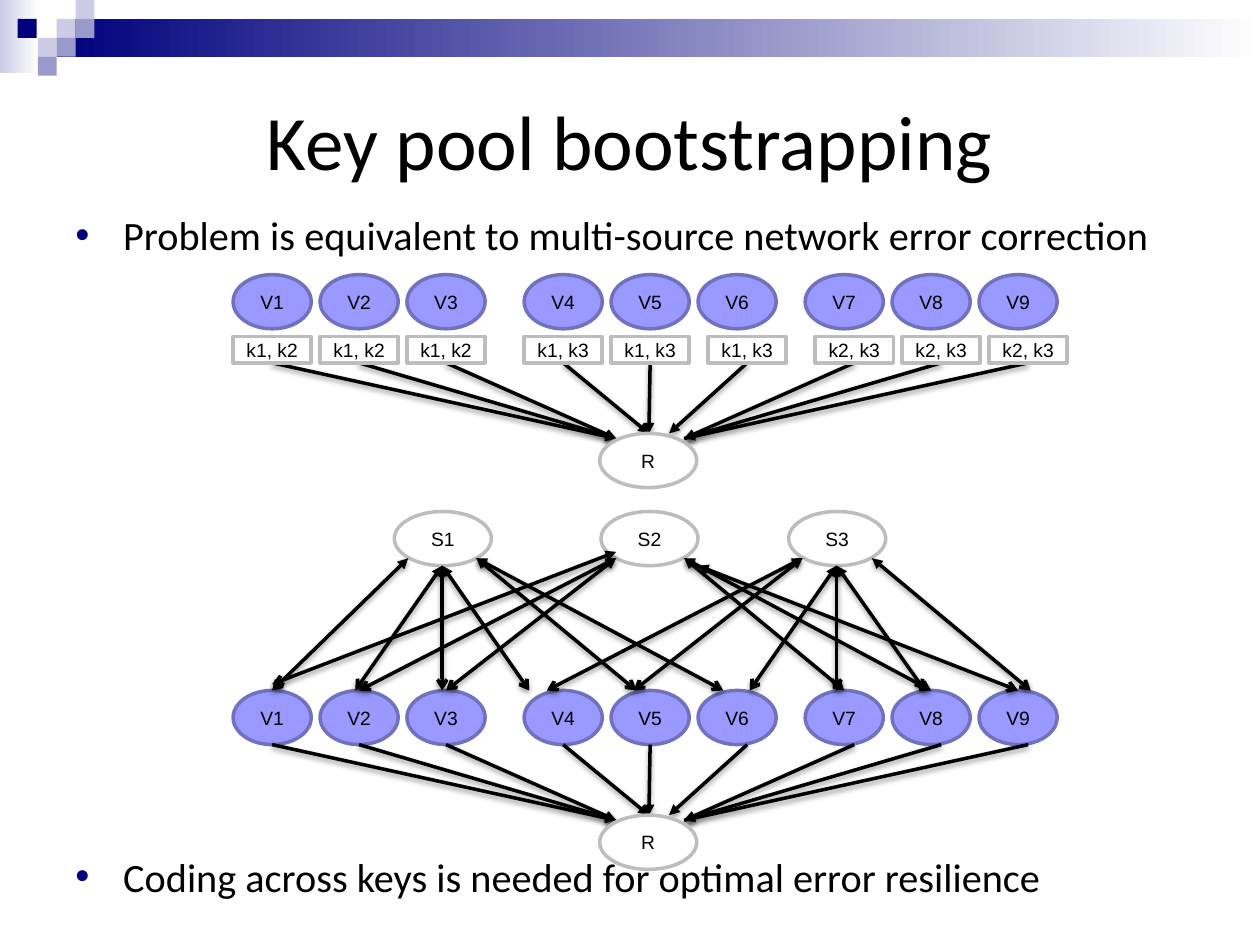
from lxml import etree
from pptx import Presentation
from pptx.dml.color import RGBColor
from pptx.enum import shapes, text
from pptx.oxml import parse_xml
from pptx.oxml.ns import nsdecls, qn
from pptx.util import Inches, Pt

BLACK = RGBColor(0, 0, 0)
WHITE = RGBColor(255, 255, 255)
NAVY = RGBColor(0x00, 0x00, 0x7D)
PALE = RGBColor(0xCC, 0xCC, 0xE6)
LAVENDER = RGBColor(0x99, 0x99, 0xCC)
VIOLET = RGBColor(0x99, 0x99, 0xFF)
VIOLET_EDGE = RGBColor(0x71, 0x71, 0xBD)
GREY = RGBColor(0xBD, 0xBD, 0xBD)

TITLE = "Key pool bootstrapping"
# text, space before in points
BULLETS = [
    ("Problem is equivalent to multi-source network error correction", 0),
    ("Coding across keys is needed for optimal error resilience", 339),
]
GRADIENT_BARS = [((0, 0, 0.31, 0.58), PALE), ((0.45, 0.15, 9.55, 0.3), NAVY)]
TILE = 0.15
TILES = [(0.45, 0.15, PALE), (0.6, 0, PALE), (0.6, 0.15, LAVENDER), (0.3, 0.3, PALE),
         (0.14, 0.15, NAVY), (0.45, 0.3, LAVENDER), (0.3, 0.45, LAVENDER)]

NODE_PITCH = 0.69
NODE_GROUPS = [1.85, 4.16, 6.39]
NODE_LEFTS = [left + i * NODE_PITCH for left in NODE_GROUPS for i in range(3)]
KEYS = ["k1, k2"] * 3 + ["k1, k3"] * 3 + ["k2, k3"] * 3
KEY_SHIFTS = [0] * 5 + [0.08] * 4
NODE_TOPS = [2.18, 5.48]
KEY_TOP = 2.67
NODE_SIZE = (0.62, 0.43)
KEY_SIZE = (0.62, 0.21)
HUB_SIZE = (0.77, 0.43)

# top of the receiver, bottom of the row that feeds it
RECEIVER_LEFT = 4.76
RECEIVERS = [(3.44, 2.88), (6.47, 5.91)]
# x, depth below the receiver's top: where each arrow lands
LANDINGS = [(4.89, 0.04)] * 3 + [(5.15, 0)] * 2 + [(5.31, 0)] + [(5.43, 0.04)] * 3

# name, left, arrows as (start, x of the end)
SOURCE_TOP = 4.06
SOURCES = [
    ("S2", 4.77, [((4.89, 4.38), 2.16), ((4.89, 4.43), 2.85), ((4.89, 4.43), 3.54),
                  ((5.43, 4.43), 6.7), ((5.43, 4.43), 7.39), ((5.54, 4.49), 8.08)]),
    ("S1", 3.13, [((3.24, 4.43), 2.16), ((3.51, 4.49), 2.82), ((3.51, 4.49), 3.51),
                  ((3.51, 4.49), 4.2), ((3.78, 4.43), 5.05), ((3.78, 4.43), 5.74)]),
    ("S3", 6.26, [((6.37, 4.43), 4.34), ((6.37, 4.43), 5.03), ((6.64, 4.49), 5.95),
                  ((6.64, 4.49), 6.64), ((6.64, 4.49), 7.34), ((6.92, 4.43), 8.18)]),
]

SHADOW = (f'<a:effectLst {nsdecls("a")}><a:outerShdw blurRad="39370" dist="20320" '
          'dir="5400000" rotWithShape="0"><a:srgbClr val="000000"><a:alpha val="38000"/>'
          '</a:srgbClr></a:outerShdw></a:effectLst>')


def add_run(paragraph, words, size, font):
    run = paragraph.add_run()
    run.text = words
    run.font.size = Pt(size)
    run.font.name = font
    run.font.color.rgb = BLACK


def add_block(slide, kind, box):
    shape = slide.shapes.add_shape(kind, *map(Inches, box))
    shape.shadow.inherit = False
    shape.line.fill.background()
    return shape


def add_node(slide, kind, box, label, fill=WHITE, edge=GREY):
    shape = add_block(slide, kind, box)
    shape.fill.solid()
    shape.fill.fore_color.rgb = fill
    shape.line.color.rgb = edge
    shape.line.width = Pt(2)
    frame = shape.text_frame
    frame.margin_left = frame.margin_right = frame.margin_top = frame.margin_bottom = 0
    frame.vertical_anchor = text.MSO_ANCHOR.MIDDLE
    frame.paragraphs[0].alignment = text.PP_ALIGN.CENTER
    add_run(frame.paragraphs[0], label, 11, "Arial")


def add_arrow(slide, start, end, head="triangle", tail=None):
    """Draw a shadowed line; head sits at start and tail at end."""
    line = slide.shapes.add_connector(shapes.MSO_CONNECTOR.STRAIGHT,
                                      *map(Inches, (*start, *end)))
    line.line.color.rgb = BLACK
    line.line.width = Pt(2)
    properties = line.line._get_or_add_ln()
    for tag, style in (("a:headEnd", head), ("a:tailEnd", tail)):
        if style:
            etree.SubElement(properties, qn(tag), type=style)
    line._element.spPr.append(parse_xml(SHADOW))


def add_decoration(slide):
    for box, colour in GRADIENT_BARS:
        bar = add_block(slide, shapes.MSO_SHAPE.RECTANGLE, box)
        bar.fill.gradient()
        bar.fill.gradient_angle = 0
        for stop, stop_colour, position in zip(bar.fill.gradient_stops, (colour, WHITE), (0, 1)):
            stop.color.rgb = stop_colour
            stop.position = position
    for left, top, colour in TILES:
        tile = add_block(slide, shapes.MSO_SHAPE.RECTANGLE, (left, top, TILE, TILE))
        tile.fill.solid()
        tile.fill.fore_color.rgb = colour


def add_text(slide):
    title = slide.shapes.title
    title.left, title.top, title.width, title.height = map(Inches, (0.5, 0.36, 9, 1.5))
    title.text_frame.vertical_anchor = text.MSO_ANCHOR.MIDDLE
    title.text_frame.paragraphs[0].alignment = text.PP_ALIGN.CENTER
    add_run(title.text_frame.paragraphs[0], TITLE, 44, "Calibri")

    frame = slide.shapes.add_textbox(*map(Inches, (0.5, 1.62, 9.3, 5.6))).text_frame
    frame.word_wrap = True
    for i, (words, gap) in enumerate(BULLETS):
        paragraph = frame.add_paragraph() if i else frame.paragraphs[0]
        paragraph.space_before = Pt(gap)
        properties = paragraph._p.get_or_add_pPr()
        properties.set("marL", str(Inches(0.38)))
        properties.set("indent", str(-Inches(0.38)))
        colour = etree.SubElement(properties, qn("a:buClr"))
        etree.SubElement(colour, qn("a:srgbClr"), val=str(NAVY))
        etree.SubElement(properties, qn("a:buFont"), typeface="Arial")
        etree.SubElement(properties, qn("a:buChar"), char="•")
        add_run(paragraph, words, 23, "Calibri")


def add_network(slide):
    oval = shapes.MSO_SHAPE.OVAL
    for top in NODE_TOPS:
        for number, left in enumerate(NODE_LEFTS, 1):
            add_node(slide, oval, (left, top, *NODE_SIZE), f"V{number}", VIOLET, VIOLET_EDGE)

    for top, feed in RECEIVERS:
        for i, (x, depth) in enumerate(LANDINGS):
            end_x = NODE_LEFTS[i] + KEY_SHIFTS[i] + KEY_SIZE[0] / 2
            is_last = i == len(LANDINGS) - 1
            add_arrow(slide, (x, top + depth), (end_x, feed),
                      head=None if is_last else "triangle")
        add_node(slide, oval, (RECEIVER_LEFT, top, *HUB_SIZE), "R")

    for left, shift, label in zip(NODE_LEFTS, KEY_SHIFTS, KEYS):
        add_node(slide, shapes.MSO_SHAPE.RECTANGLE, (left + shift, KEY_TOP, *KEY_SIZE), label)

    for name, left, arrows in SOURCES:
        add_node(slide, oval, (left, SOURCE_TOP, *HUB_SIZE), name)
        for start, end_x in arrows:
            end_y = 5.43 if start[1] == 4.38 else NODE_TOPS[1]
            add_arrow(slide, start, (end_x, end_y), tail="arrow")


def main():
    presentation = Presentation()
    presentation.slide_width, presentation.slide_height = Inches(10), Inches(7.5)
    slide = presentation.slides.add_slide(presentation.slide_layouts[5])
    add_decoration(slide)
    add_text(slide)
    add_network(slide)
    presentation.save("out.pptx")


if __name__ == "__main__":
    main()
